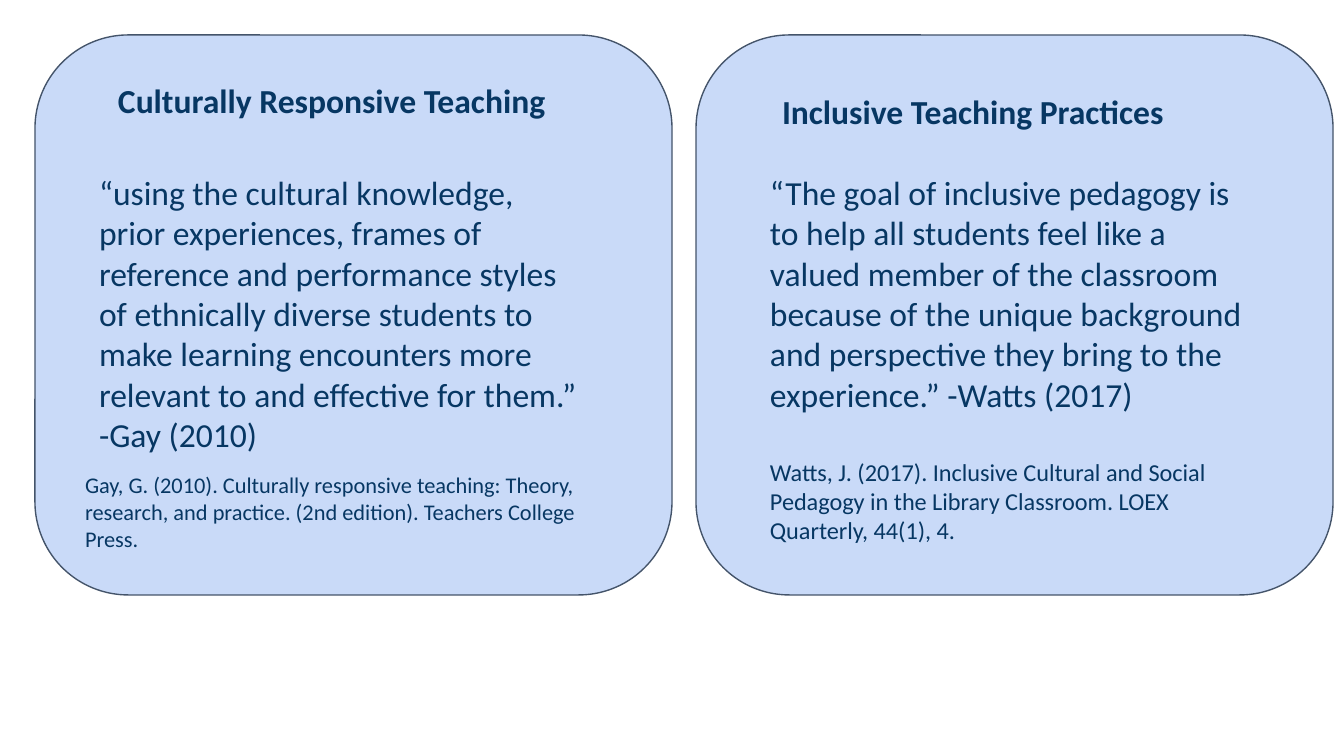
from dataclasses import dataclass

from lxml import etree
from pptx import Presentation
from pptx.dml.color import RGBColor
from pptx.enum.shapes import MSO_SHAPE
from pptx.enum.text import MSO_ANCHOR, MSO_AUTO_SIZE, PP_ALIGN
from pptx.oxml.ns import qn
from pptx.util import Emu, Pt

ROUNDED = MSO_SHAPE.ROUNDED_RECTANGLE
TOP = MSO_ANCHOR.TOP
LEFT = PP_ALIGN.LEFT
GROW = MSO_AUTO_SIZE.SHAPE_TO_FIT_TEXT
COMPARISON_LAYOUT = 4
PX = 914400 / 134.4
INSET = 13


@dataclass(frozen=True)
class Theme:
    font: str = "Calibri"
    ink: RGBColor = RGBColor(0x07, 0x37, 0x63)
    card: RGBColor = RGBColor(0xC9, 0xDA, 0xF8)
    outline: RGBColor = RGBColor(0x44, 0x54, 0x6A)
    outline_pt: float = 0.75
    text_pt: int = 18


@dataclass(frozen=True)
class Box:
    x: int
    y: int
    w: int
    h: int


@dataclass(frozen=True)
class Text:
    box: Box
    words: str
    size: int
    bold: bool = False
    filled: bool = False


@dataclass(frozen=True)
class Card:
    box: Box
    heading_idx: int
    quote_idx: int
    heading: Text
    quote: Text
    citation: Text


THEME = Theme()

CARDS = [
    Card(
        Box(35, 35, 637, 560), 1, 2,
        Text(Box(105, 67, 504, 67), "Culturally Responsive Teaching",
             THEME.text_pt, bold=True),
        Text(Box(86, 159, 504, 312),
             "“using the cultural knowledge, prior experiences, frames of "
             "reference and performance styles of ethnically diverse students "
             "to make learning encounters more relevant to and effective for "
             "them.” -Gay (2010)", THEME.text_pt, filled=True),
        Text(Box(72, 458, 531, 109),
             "Gay, G. (2010). Culturally responsive teaching: Theory, research, "
             "and practice. (2nd edition). Teachers College Press.", 12),
    ),
    Card(
        Box(696, 35, 637, 560), 3, 4,
        Text(Box(769, 78, 466, 67), "Inclusive Teaching Practices",
             THEME.text_pt, bold=True),
        Text(Box(757, 159, 513, 271),
             "“The goal of inclusive pedagogy is to help all students feel like "
             "a valued member of the classroom because of the unique background "
             "and perspective they bring to the experience.” -Watts (2017)",
             THEME.text_pt),
        Text(Box(757, 444, 491, 116),
             "Watts, J. (2017). Inclusive Cultural and Social Pedagogy in the "
             "Library Classroom. LOEX Quarterly, 44(1), 4.", 13),
    ),
]


def px(n: int) -> Emu:
    return Emu(round(n * PX))


def edges(box: Box) -> tuple[Emu, Emu, Emu, Emu]:
    return px(box.x), px(box.y), px(box.w), px(box.h)


def write_text(sp, text: Text) -> None:
    """Place a placeholder or text box and fill it with one plain paragraph."""
    sp.left, sp.top, sp.width, sp.height = edges(text.box)
    if text.filled:
        sp.fill.solid()
        sp.fill.fore_color.rgb = THEME.card
    tf = sp.text_frame
    tf.text = text.words
    tf.word_wrap = True
    tf.auto_size = GROW
    tf.vertical_anchor = TOP
    tf.margin_left = tf.margin_right = px(INSET)
    tf.margin_top = tf.margin_bottom = px(INSET)
    p = tf.paragraphs[0]
    p.alignment = LEFT
    p.space_before = Pt(0)
    # No bullet and no hanging indent
    pPr = p._p.get_or_add_pPr()
    pPr.set("marL", "0")
    pPr.set("indent", "0")
    etree.SubElement(pPr, qn("a:buNone"))
    font = p.runs[0].font
    font.name = THEME.font
    font.size = Pt(text.size)
    font.bold = text.bold
    font.color.rgb = THEME.ink


def draw_card(slide, card: Card) -> None:
    # Rounded panel
    sp = slide.shapes.add_shape(ROUNDED, *edges(card.box))
    sp.shadow.inherit = False
    sp.fill.solid()
    sp.fill.fore_color.rgb = THEME.card
    sp.line.color.rgb = THEME.outline
    sp.line.width = Pt(THEME.outline_pt)

    # Heading and quote placeholders, raised above the panel
    placeholders = {ph.placeholder_format.idx: ph for ph in slide.placeholders}
    for idx, text in ((card.heading_idx, card.heading),
                      (card.quote_idx, card.quote)):
        ph = placeholders[idx]
        slide.shapes._spTree.append(ph._element)
        write_text(ph, text)

    # Citation
    write_text(slide.shapes.add_textbox(*edges(card.citation.box)), card.citation)


def main() -> None:
    prs = Presentation()
    prs.slide_width, prs.slide_height = px(1344), px(756)
    slide = prs.slides.add_slide(prs.slide_layouts[COMPARISON_LAYOUT])

    # The two cards carry their own headings
    title = slide.shapes.title._element
    title.getparent().remove(title)

    for card in CARDS:
        draw_card(slide, card)
    prs.save("out.pptx")


if __name__ == "__main__":
    main()
